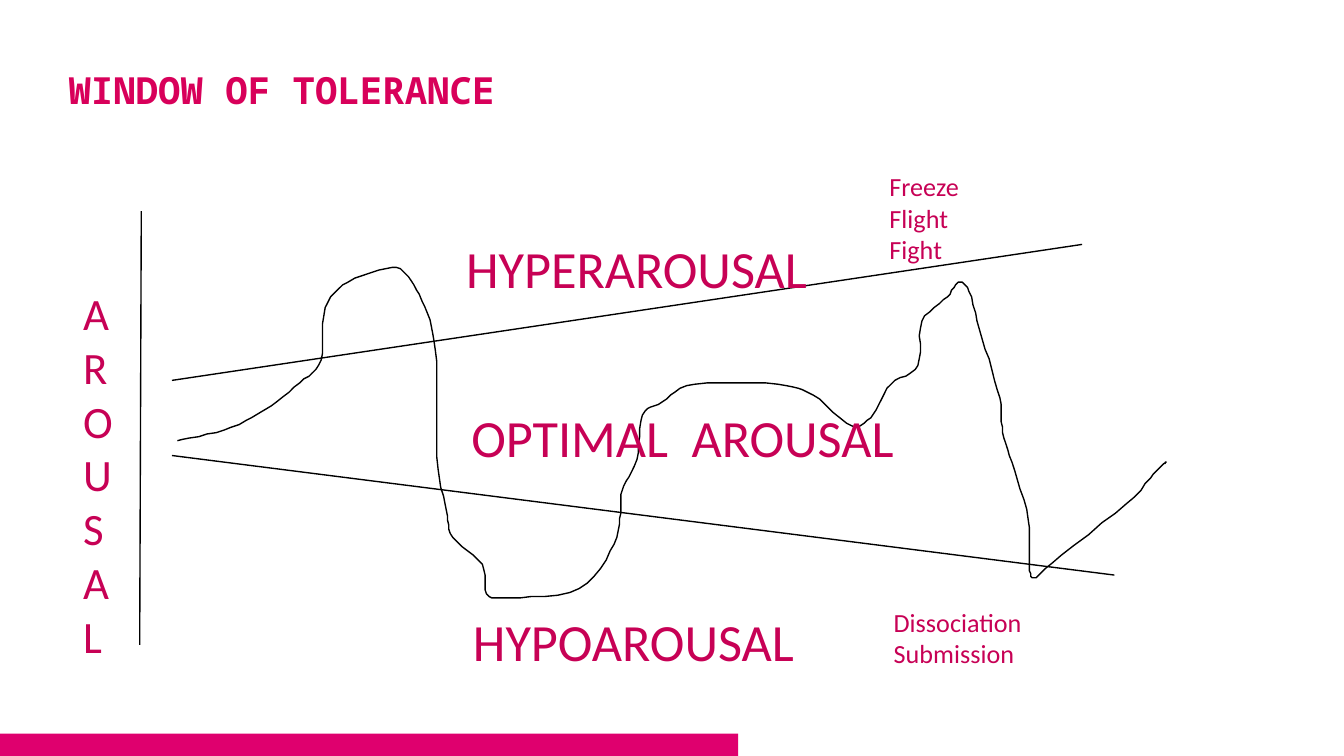
from itertools import product
from lxml.etree import SubElement as Sub
from pptx import Presentation as Deck
from pptx.dml.color import RGBColor as Rgb
from pptx.enum.shapes import MSO_CONNECTOR as Link, MSO_SHAPE as Form
from pptx.enum.text import MSO_ANCHOR as Anchor, MSO_AUTO_SIZE as Fit, PP_ALIGN as Align
from pptx.oxml.ns import qn
from pptx.util import Cm, Pt

INK = "000000"
ROSE = "C70155"
HEAD = {"name": "Noto Sans Mono", "size": Pt(20), "bold": True}
ZONE = {"name": "Calibri", "size": Pt(28)}
AXIS = {"name": "Calibri", "size": Pt(24)}
NOTE = {"name": "Calibri", "size": Pt(14)}

LABELS = [
    (["Freeze", "Flight", "Fight"], NOTE, (15.29, 0.56, 1.83, 2.06)),
    (list("AROUSAL"), AXIS, (0.05, 2.74, 1.07, 7.44)),
    (["Dissociation", "Submission"], NOTE, (15.37, 8.79, 2.97, 1.45)),
    (["HYPERAROUSAL"], ZONE, (7.29, 1.8, 7.04, 1.45)),
    (["HYPOAROUSAL"], ZONE, (7.42, 8.86, 6.65, 1.45)),
    (["OPTIMAL  AROUSAL"], ZONE, (7.39, 5, 8.59, 1.45)),
]
LINES = [
    (1.4, 1.45, 1.37, 9.65),
    (1.98, 6.07, 19.79, 8.33),
    (1.98, 4.65, 19.18, 2.08),
]
STEP = Cm(0.0254)
TURNS = 6
WAVE = [
    (82, 228), (117, 220), (147, 205), (173, 185), (189, 168), (192, 129),
    (209, 110), (242, 99), (256, 109), (268, 133), (275, 169), (275, 240),
    (282, 279), (287, 300), (309, 320), (312, 342), (330, 345), (381, 338),
    (407, 305), (412, 278), (413, 265), (424, 242), (428, 209), (443, 199),
    (467, 186), (529, 186), (555, 194), (584, 217), (600, 208), (613, 186),
    (633, 172), (636, 139), (655, 121), (663, 110), (671, 117), (681, 153),
    (694, 196), (696, 222), (703, 244), (715, 286), (716, 322), (720, 330),
    (733, 319), (788, 275), (811, 250), (818, 244),
]


def paint(item, code):
    item.rgb = Rgb.from_string(code)


def style(font, form, code):
    for key, value in form.items():
        setattr(font, key, value)
    paint(font.color, code)


def stroke(line):
    line.width = Pt(0.75)
    paint(line.color, INK)


def place(shape, box):
    for key, value in zip(("left", "top", "width", "height"), box):
        setattr(shape, key, Cm(value))


def title(slide, box):
    head = slide.shapes.title
    place(head, box)
    frame = head.text_frame
    frame.text = "WINDOW OF TOLERANCE"
    for key, value in {"word_wrap": True, "auto_size": Fit.NONE,
                       "vertical_anchor": Anchor.TOP}.items():
        setattr(frame, key, value)
    para = frame.paragraphs[0]
    para.alignment = Align.CENTER
    style(para.font, HEAD, "D8005A")


def label(slide, rows, form, box):
    frame = slide.shapes.add_textbox(*map(Cm, box)).text_frame
    frame.word_wrap = False
    frame.auto_size = Fit.SHAPE_TO_FIT_TEXT
    frame.text = "\n".join(rows)
    for para in frame.paragraphs:
        style(para.font, form, ROSE)


def blend(a, b, c, d, t):
    bend = (2 * a - 5 * b + 4 * c - d) * t ** 2
    twist = (3 * b - a - 3 * c + d) * t ** 3
    return (2 * b + (c - a) * t + bend + twist) / 2


def smooth(dots):
    ends = [dots[0], *dots, dots[-1]]
    spans = list(zip(ends, ends[1:], ends[2:], ends[3:]))
    return [tuple(blend(*axis, turn / TURNS) for axis in zip(*span))
            for span, turn in product(spans, range(1, TURNS + 1))]


def wave(slide, left, top):
    pen = slide.shapes.build_freeform(*WAVE[0], scale=STEP)
    pen.add_line_segments(smooth(WAVE), close=False)
    curve = pen.convert_to_shape(Cm(left), Cm(top))
    curve.shadow.inherit = False
    curve.fill.background()
    stroke(curve.line)


def graph(slide, left, top):
    for x1, y1, x2, y2 in LINES:
        ends = (left + x1, top + y1, left + x2, top + y2)
        line = slide.shapes.add_connector(Link.STRAIGHT, *map(Cm, ends))
        stroke(line.line)
        Sub(line._element.spPr, qn("a:effectLst"))
    wave(slide, left, top)
    for rows, form, (x, y, wide, high) in LABELS:
        label(slide, rows, form, (left + x, top + y, wide, high))


def band(slide, box):
    bar = slide.shapes.add_shape(Form.RECTANGLE, *map(Cm, box))
    bar.shadow.inherit = False
    bar.fill.solid()
    paint(bar.fill.fore_color, "DF006E")
    bar.line.fill.background()


def main():
    deck = Deck()
    deck.slide_width, deck.slide_height = Cm(25.4), Cm(14.29)
    slide = deck.slides.add_slide(deck.slide_layouts[5])
    band(slide, (-0.53, 13.87, 14.48, 0.46))
    graph(slide, 1.27, 2.54)
    title(slide, (0.69, 1.14, 9.27, 2.51))
    deck.save("out.pptx")


if __name__ == "__main__":
    main()
